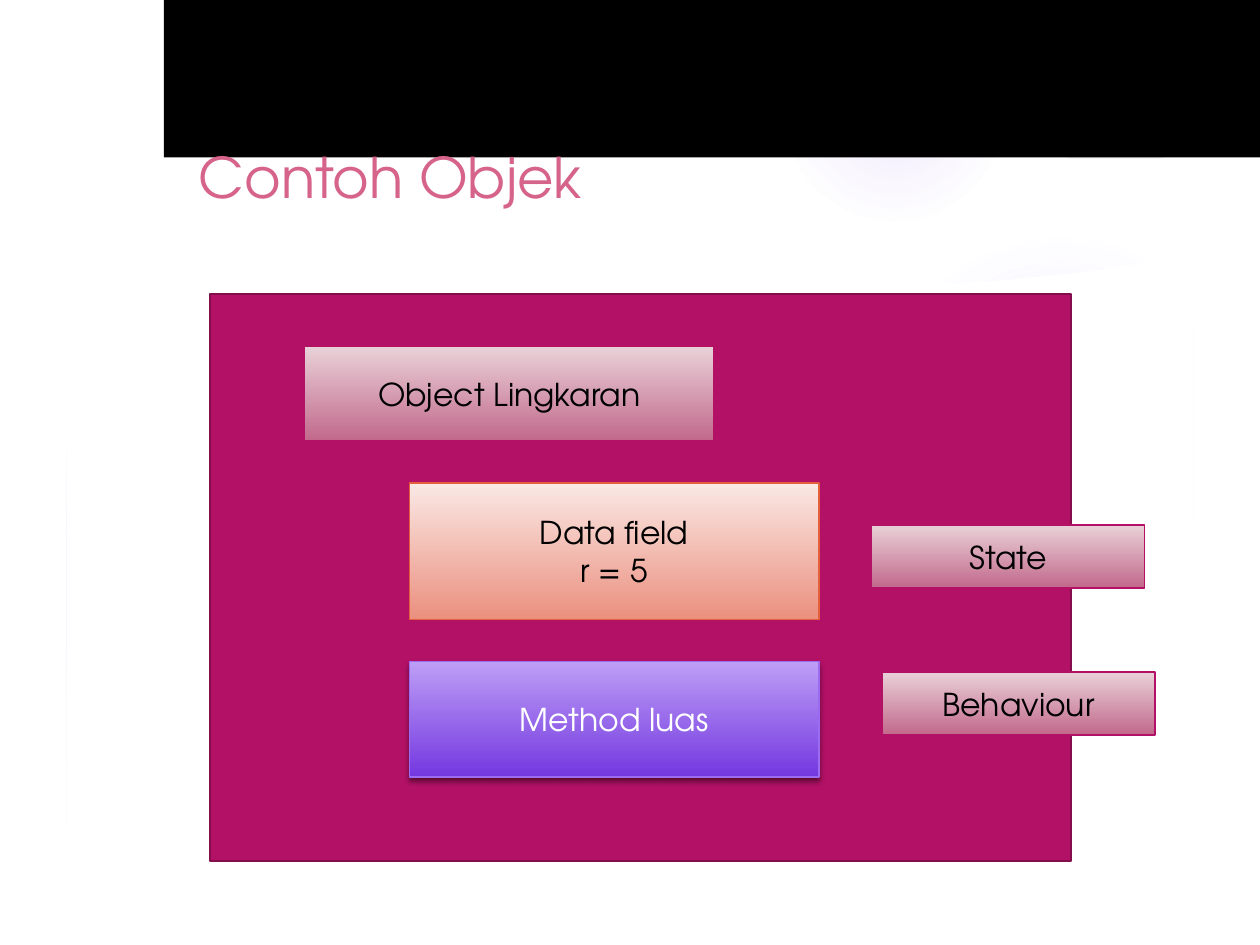
from lxml import etree
from pptx import Presentation
from pptx.dml.color import RGBColor as RGB
from pptx.enum.shapes import MSO_SHAPE as SHAPE
from pptx.enum.text import MSO_ANCHOR as ANCHOR, PP_ALIGN as ALIGN
from pptx.oxml import parse_xml
from pptx.oxml.ns import nsdecls, qn
from pptx.util import Pt

COLORS = {
    "white": "FFFFFF", "black": "000000", "glow": "9B6BF2",
    "title": "D6638A", "magenta": "B31166", "plum": "840D4B",
    "rose_light": "E9D1D8", "rose_dark": "C2698B",
    "coral_light": "FAE8E5", "coral_dark": "EB907F", "coral_line": "E45F3C",
    "violet_light": "BD9EF6", "violet_dark": "7438E0",
}
ROSE = ("rose_light", "rose_dark", "magenta")
CORAL = ("coral_light", "coral_dark", "coral_line")
VIOLET = ("violet_light", "violet_dark", "glow")


def rgb(name):
    return RGB.from_string(COLORS[name])


class SlideBuilder:
    font = "TeX Gyre Adventor"

    def __init__(self, slide):
        self.slide = slide
        self.shapes = slide.shapes

    def plain(self, s, fill, line=None, width=0.75):
        s.shadow.inherit = False
        s.fill.solid()
        s.fill.fore_color.rgb = rgb(fill)
        if line:
            s.line.color.rgb = rgb(line)
            s.line.width = Pt(width)
        else:
            s.line.fill.background()
        return s

    def shape(self, box, fill, kind=SHAPE.RECTANGLE, **line):
        s = self.shapes.add_shape(kind, *map(Pt, box))
        return self.plain(s, fill, **line)

    def outline(self, points, fill):
        fb = self.shapes.build_freeform(*points[0], scale=Pt(1))
        fb.add_line_segments(points[1:], close=True)
        return self.plain(fb.convert_to_shape(), fill)

    def glow(self, x, y, size, stops):
        s = self.shape((x, y, size, size), "glow", SHAPE.OVAL)
        gs = "".join(
            f'<a:gs pos="{pos * 1000}"><a:srgbClr val="{COLORS["glow"]}">'
            f'<a:alpha val="{alpha * 1000}"/></a:srgbClr></a:gs>'
            for pos, alpha in stops)
        grad = parse_xml(
            f'<a:gradFill {nsdecls("a")} rotWithShape="1"><a:gsLst>{gs}</a:gsLst>'
            '<a:path path="circle"><a:fillToRect l="50000" t="50000" r="50000" '
            'b="50000"/></a:path></a:gradFill>')
        solid = s.element.spPr.find(qn("a:solidFill"))
        solid.getparent().replace(solid, grad)

    def fade(self, s, percent):
        color = s.element.spPr.find(qn("a:solidFill"))[0]
        etree.SubElement(color, qn("a:alpha"), val=str(percent * 1000))

    def drop_shadow(self, s):
        effects = s.element.spPr.find(qn("a:effectLst"))
        effects.append(parse_xml(
            f'<a:outerShdw {nsdecls("a")} blurRad="{Pt(3)}" dist="{Pt(2)}" '
            'dir="5400000" rotWithShape="0"><a:srgbClr val="000000">'
            '<a:alpha val="45000"/></a:srgbClr></a:outerShdw>'))

    def add_text(self, tf, lines, size, color, align):
        for i, line in enumerate(lines):
            p = tf.paragraphs[0] if i == 0 else tf.add_paragraph()
            p.alignment = align
            r = p.add_run()
            r.text = line
            for key, value in {"name": self.font, "size": Pt(size), "bold": False}.items():
                setattr(r.font, key, value)
            r.font.color.rgb = rgb(color)

    def label(self, box, lines, style, color="black"):
        top, bottom, line = style
        s = self.shape(box, top, line=line)
        s.fill.gradient()
        s.fill.gradient_angle = 270
        for stop, name, pos in zip(s.fill.gradient_stops, (top, bottom), (0, 1)):
            stop.color.rgb = rgb(name)
            stop.position = pos
        tf = s.text_frame
        tf.word_wrap = True
        tf.vertical_anchor = ANCHOR.MIDDLE
        self.add_text(tf, lines, 18, color, ALIGN.CENTER)
        return s

    def title(self, box, text):
        s = self.shapes.title
        for key, value in zip(("left", "top", "width", "height"), box):
            setattr(s, key, Pt(value))
        tf = s.text_frame
        tf.word_wrap = True
        tf.vertical_anchor = ANCHOR.MIDDLE
        self.add_text(tf, [text], 32, "title", ALIGN.LEFT)
        pPr = tf.paragraphs[0]._p.get_or_add_pPr()
        pPr.set("marL", str(Pt(38)))
        pPr.set("indent", "0")
        s.element.getparent().append(s.element)  # above the black bar


def main():
    prs = Presentation()
    prs.slide_width, prs.slide_height = Pt(720), Pt(540)
    b = SlideBuilder(prs.slides.add_slide(prs.slide_layouts[5]))

    # Soft background glows: (x, y, size, (position, opacity) stops)
    for glow in [
        (0, 228, 186, [(0, 8), (36, 8), (72, 0)]),
        (496, 132, 222, [(0, 7), (36, 6), (69, 0)]),
        (448, 0, 126, [(0, 14), (36, 7), (73, 0)]),
        (496, 462, 78, [(0, 14), (36, 7), (66, 0)]),
        (0, 210, 330, [(0, 11), (36, 10), (75, 0)]),
    ]:
        b.glow(*glow)

    # Faint swoosh and the white panel with its curved top
    swoosh = b.outline([(503, 168.5), (560, 167), (620, 159.5), (688, 150),
                        (685, 125), (636, 140), (589, 151), (542, 159),
                        (501, 165)], "white")
    swoosh.rotation = -9.8
    b.fade(swoosh, 20)
    b.outline([(38, 146), (38, 503), (682, 503), (682, 146), (623, 155),
               (565, 161), (507, 165), (450, 168), (395, 168.5), (341, 168.5),
               (291, 168), (243, 165.5), (199, 163), (160, 160), (95, 153)],
              "white")

    # Slide frame and top bar
    frame = b.shape((0, 0, 720, 540), "white", SHAPE.FRAME)
    frame.adjustments[0] = 0.07
    b.drop_shadow(b.shape((610, 0, 54, 86.4), "magenta"))
    b.shape((93.6, 0, 626.4, 90), "black")

    b.title((68.4, 72.7, 499.7, 56.2), "Contoh Objek")

    # Object diagram
    b.shape((120, 168, 492, 324), "magenta", line="plum", width=1.5)
    b.label((234, 276, 234, 78), ["Data field", "r = 5"], CORAL)
    b.drop_shadow(b.label((234, 378, 234, 66), ["Method luas"], VIOLET, "white"))
    b.label((174, 198, 234, 54), ["Object Lingkaran"], ROSE)
    b.label((498, 300, 156, 36), ["State"], ROSE)
    b.label((504, 384, 156, 36), ["Behaviour"], ROSE)

    prs.save("out.pptx")


if __name__ == "__main__":
    main()
